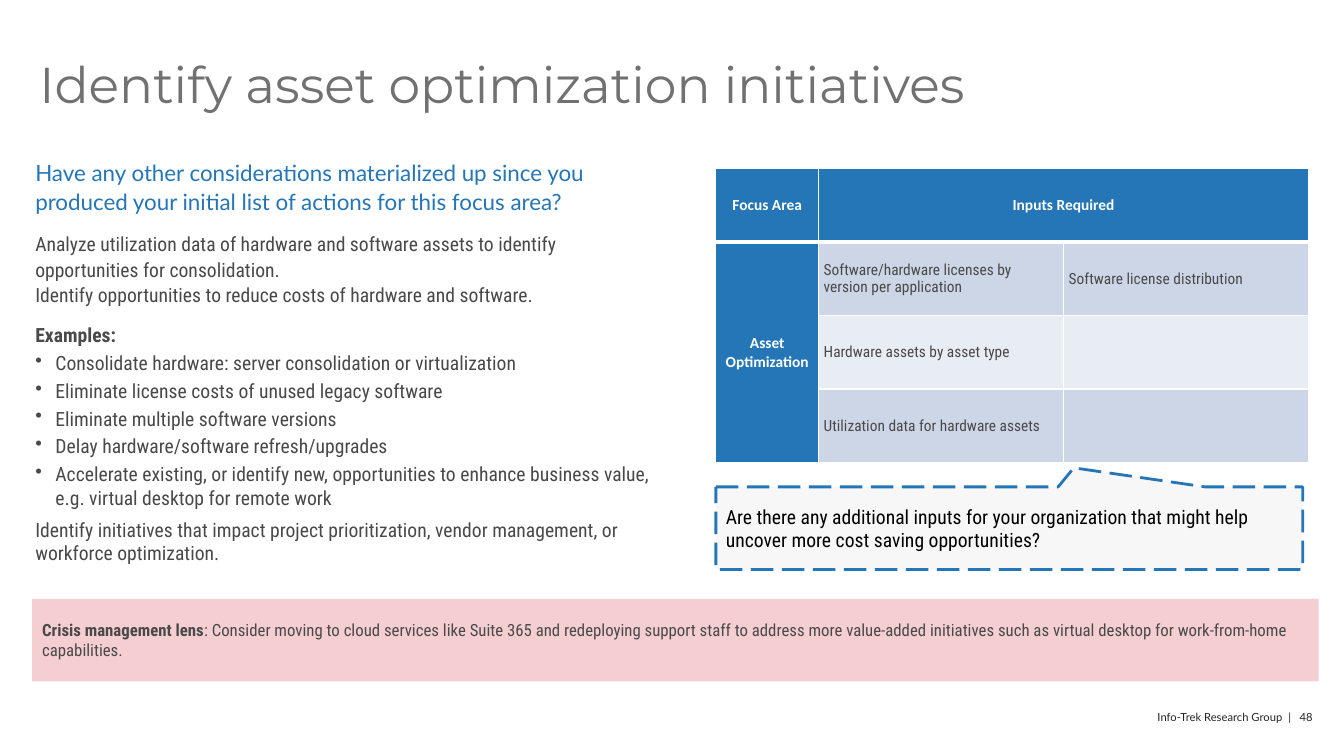
from lxml import etree
from pptx import Presentation
from pptx import util as u
from pptx.dml.color import RGBColor
from pptx.enum import dml, shapes, text
from pptx.oxml import ns

BLUE = RGBColor(0x25, 0x76, 0xB7)
OUTLINE = RGBColor(0x24, 0x76, 0xB7)
TITLE_GRAY = RGBColor(0x71, 0x71, 0x71)
BODY_GRAY = RGBColor(0x49, 0x49, 0x49)
FOOTER_GRAY = RGBColor(0x24, 0x24, 0x24)
WHITE = RGBColor(0xFF, 0xFF, 0xFF)
BLACK = RGBColor(0, 0, 0)
PINK = RGBColor(0xF5, 0xCE, 0xD1)
PALE = RGBColor(0xF2, 0xF2, 0xF2)
BANDS = [RGBColor(0xCD, 0xD6, 0xE6), RGBColor(0xE8, 0xEC, 0xF3)]

LATO, CONDENSED, HEADING, TABLE_FONT = "Lato", "Roboto Condensed", "Montserrat", "Calibri"
PX = u.Inches(1) // 100

QUESTION = ("Have any other considerations materialized up since you produced "
            "your initial list of actions for this focus area?")
ACTIONS = [
    "Analyze utilization data of hardware and software assets to identify opportunities for consolidation.",
    "Identify opportunities to reduce costs of hardware and software.",
]
EXAMPLES = [
    "Consolidate hardware: server consolidation or virtualization",
    "Eliminate license costs of unused legacy software",
    "Eliminate multiple software versions",
    "Delay hardware/software refresh/upgrades",
    "Accelerate existing, or identify new, opportunities to enhance business value, "
    "e.g. virtual desktop for remote work",
]
CLOSING = "Identify initiatives that impact project prioritization, vendor management, or workforce optimization."
LENS = (": Consider moving to cloud services like Suite 365 and redeploying support staff to address "
        "more value-added initiatives such as virtual desktop for work-from-home capabilities.")
INPUTS = [
    ["Software/hardware licenses by version per application", "Software license distribution"],
    ["Hardware assets by asset type", ""],
    ["Utilization data for hardware assets", ""],
]


class SlideBuilder:
    def __init__(self, deck):
        self.slide = deck.slides.add_slide(deck.slide_layouts[6])

    def style(self, runs, font, size, color, bold=False):
        for run in runs:
            run.font.name = font
            run.font.size = u.Pt(size)
            run.font.color.rgb = color
            run.font.bold = bold

    def box(self, *place):
        frame = self.slide.shapes.add_textbox(*(n * PX for n in place)).text_frame
        frame.word_wrap = True
        frame.margin_left = frame.margin_top = frame.margin_right = frame.margin_bottom = 0
        return frame

    def paragraph(self, frame, words, font, size, color, bold=False,
                  before=0, spacing=None, bullet=False):
        first = frame.paragraphs[0]
        line = frame.add_paragraph() if first.runs else first
        line.text = words
        if before:
            line.space_before = u.Pt(before)
        if spacing:
            line.line_spacing = spacing
        if bullet:
            props = line._p.get_or_add_pPr()
            props.set("marL", str(20 * PX))
            props.set("indent", str(-20 * PX))
            etree.SubElement(props, ns.qn("a:buChar")).set("char", "•")
        self.style(line.runs, font, size, color, bold)
        return line

    def panel(self, kind, fill, *place):
        panel = self.slide.shapes.add_shape(kind, *(n * PX for n in place))
        panel.shadow.inherit = False
        panel.fill.solid()
        panel.fill.fore_color.rgb = fill
        panel.line.fill.background()
        panel.text_frame.word_wrap = True
        panel.text_frame.vertical_anchor = text.MSO_ANCHOR.MIDDLE
        panel.text_frame.paragraphs[0].alignment = text.PP_ALIGN.LEFT
        return panel

    def table(self, left, top, widths, heights):
        grid = self.slide.shapes.add_table(
            len(heights), len(widths), left * PX, top * PX,
            sum(widths) * PX, sum(heights) * PX).table
        for column, width in zip(grid.columns, widths):
            column.width = width * PX
        for row, height in zip(grid.rows, heights):
            row.height = height * PX
        return grid

    def cell(self, cell, words, fill, header=False, bottom=1):
        props = cell._tc.get_or_add_tcPr()
        for side, width in zip("LRTB", (1, 1, 1, bottom)):
            edge = etree.SubElement(props, ns.qn(f"a:ln{side}"), w=str(u.Pt(width)))
            solid = etree.SubElement(edge, ns.qn("a:solidFill"))
            etree.SubElement(solid, ns.qn("a:srgbClr"), val=str(WHITE))
        cell.fill.solid()
        cell.fill.fore_color.rgb = fill
        cell.vertical_anchor = text.MSO_ANCHOR.MIDDLE
        cell.margin_left = cell.margin_right = (7 if header else 5) * PX
        cell.margin_top = cell.margin_bottom = (0 if header else 5) * PX
        if words:
            line = cell.text_frame.paragraphs[0]
            line.text = words
            line.alignment = text.PP_ALIGN.CENTER if header else text.PP_ALIGN.LEFT
            self.style(line.runs, TABLE_FONT if header else CONDENSED, 11,
                       WHITE if header else BODY_GRAY, header)


def main():
    deck = Presentation()
    deck.slide_width, deck.slide_height = 1333 * PX, 750 * PX
    page = SlideBuilder(deck)

    footer = page.paragraph(page.box(936, 705, 366, 13), "Info-Trek Research Group",
                            LATO, 8, FOOTER_GRAY)
    footer.alignment = text.PP_ALIGN.RIGHT
    divider, number = footer.add_run(), footer.add_run()
    divider.text, number.text = " | ", "48"
    page.style([divider, number], LATO, 8, FOOTER_GRAY)
    divider._r.get_or_add_rPr().set("spc", "200")

    page.paragraph(page.box(39, 60, 1144, 124), "Identify asset optimization initiatives",
                   HEADING, 36, TITLE_GRAY, spacing=0.9)

    body = page.box(35, 155, 622, 328)
    page.paragraph(body, QUESTION, LATO, 16, BLUE, spacing=1.1)
    for action, before in zip(ACTIONS, (10, 0)):
        page.paragraph(body, action, CONDENSED, 14, BODY_GRAY, before=before, spacing=1.1)
    page.paragraph(body, "Examples:", CONDENSED, 14, BODY_GRAY, True, before=10, spacing=1.1)
    for example in EXAMPLES:
        page.paragraph(body, example, CONDENSED, 14, BODY_GRAY, before=3, bullet=True)
    page.paragraph(body, CLOSING, CONDENSED, 14, BODY_GRAY, before=6)

    lens = page.panel(shapes.MSO_SHAPE.RECTANGLE, PINK, 32, 594, 1276, 82)
    lens_line = page.paragraph(lens.text_frame, "Crisis management lens",
                               CONDENSED, 12, BODY_GRAY, True)
    advice = lens_line.add_run()
    advice.text = LENS
    page.style([advice], CONDENSED, 12, BODY_GRAY)

    grid = page.table(710, 167, [102, 243, 243], [73] * 4)
    grid.cell(0, 1).merge(grid.cell(0, 2))
    grid.cell(1, 0).merge(grid.cell(3, 0))
    for column, heading in enumerate(["Focus Area", "Inputs Required", ""]):
        page.cell(grid.cell(0, column), heading, BLUE, True, bottom=3)
    for row, inputs in enumerate(INPUTS, 1):
        page.cell(grid.cell(row, 0), "Asset Optimization" if row == 1 else "", BLUE, True)
        for column, needed in enumerate(inputs, 1):
            page.cell(grid.cell(row, column), needed, BANDS[(row - 1) % 2])

    prompt = page.panel(shapes.MSO_SHAPE.RECTANGULAR_CALLOUT, PALE, 710, 483, 582, 82)
    prompt.adjustments[0], prompt.adjustments[1] = 0.11, -0.73
    prompt.line.color.rgb = OUTLINE
    prompt.line.width = u.Pt(2)
    prompt.line.dash_style = dml.MSO_LINE.LONG_DASH
    tint = prompt._element.spPr.find(ns.qn("a:solidFill")).find(ns.qn("a:srgbClr"))
    etree.SubElement(tint, ns.qn("a:alpha"), val="54000")
    page.paragraph(prompt.text_frame,
                   "Are there any additional inputs for your organization that might help "
                   "uncover more cost saving opportunities?", CONDENSED, 14, BLACK)

    deck.save("out.pptx")


if __name__ == "__main__":
    main()
